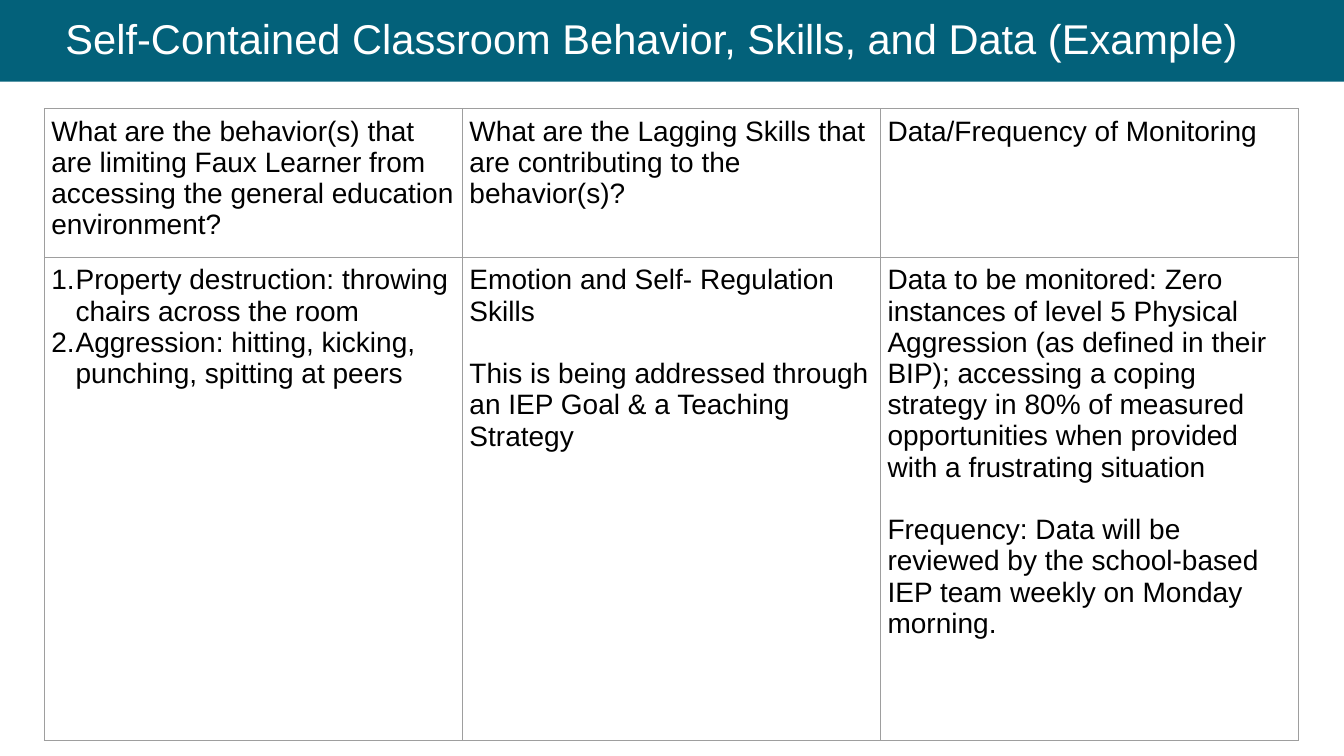
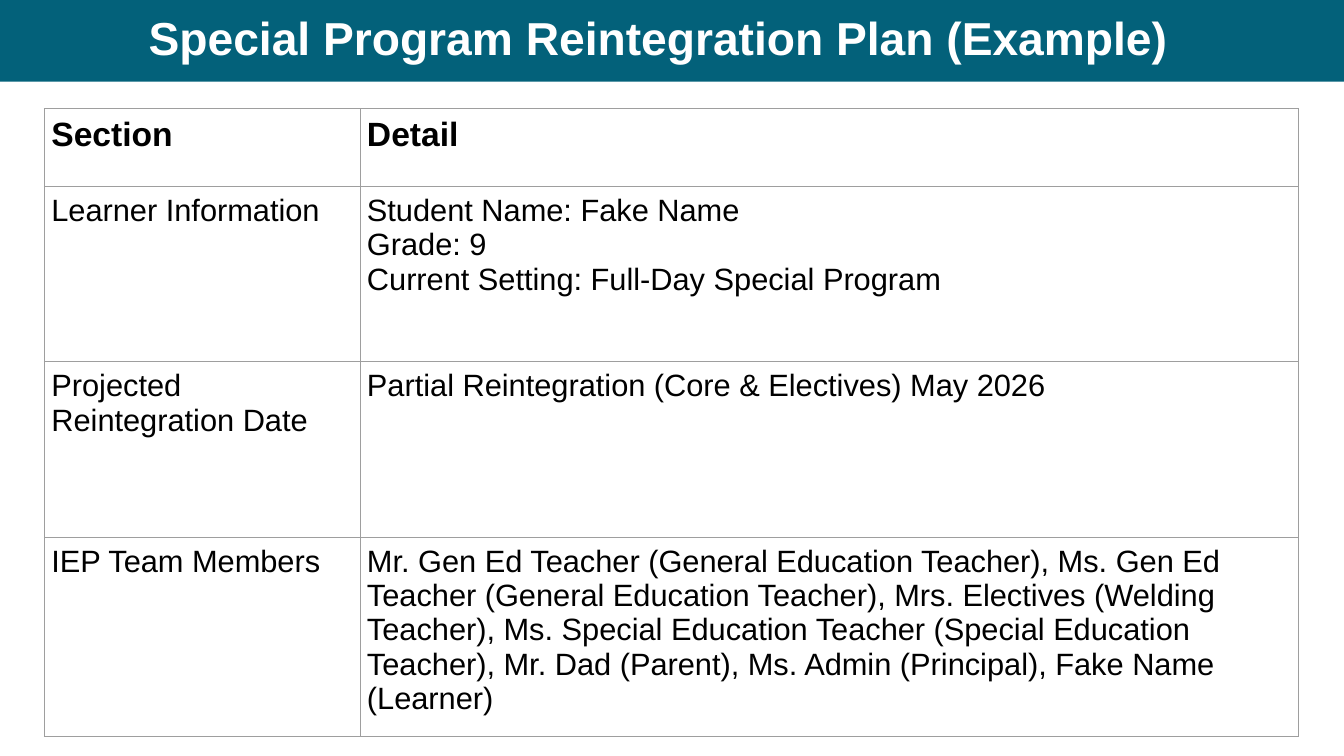
from lxml import etree
from pptx import Presentation
from pptx.dml.color import RGBColor
from pptx.enum import shapes, text
from pptx.oxml import ns
from pptx.util import Inches, Pt

FONT = "Arial"
TEAL, WHITE, BLACK, GREY = "03617A", "FFFFFF", "000000", "9E9E9E"
SLIDE_WIDTH, SLIDE_HEIGHT = 13.33, 7.5
BAND_HEIGHT = 0.81
TITLE_LEFT, TITLE_WIDTH = 0.37, 12.32
TABLE_LEFT, TABLE_TOP, TABLE_WIDTH = 0.44, 1.08, 12.44
CELL_MARGIN = 0.07
NUMBER_INDENT = 0.24

BEHAVIOR_ROWS = [
    [["What are the behavior(s) that are limiting Faux Learner from accessing "
      "the general education environment?"],
     ["What are the Lagging Skills that are contributing to the behavior(s)?"],
     ["Data/Frequency of Monitoring"]],
    [["Property destruction: throwing chairs across the room",
      "Aggression: hitting, kicking, punching, spitting at peers"],
     ["Emotion and Self- Regulation Skills",
      "This is being addressed through an IEP Goal & a Teaching Strategy"],
     ["Data to be monitored: Zero instances of level 5 Physical Aggression "
      "(as defined in their BIP); accessing a coping strategy in 80% of measured "
      "opportunities when provided with a frustrating situation",
      "Frequency: Data will be reviewed by the school-based IEP team weekly on "
      "Monday morning."]],
]

PLAN_ROWS = [
    [["Section"], ["Detail"]],
    [["Learner Information"],
     ["Student Name: Fake Name", "Grade: 9",
      "Current Setting: Full-Day Special Program"]],
    [["Projected Reintegration Date"],
     ["Partial Reintegration (Core & Electives) May 2026"]],
    [["IEP Team Members"],
     ["Mr. Gen Ed Teacher (General Education Teacher), Ms. Gen Ed Teacher "
      "(General Education Teacher), Mrs. Electives (Welding Teacher), "
      "Ms. Special Education Teacher (Special Education Teacher), "
      "Mr. Dad (Parent), Ms. Admin (Principal), Fake Name (Learner)"]],
]


def color(value):
    return RGBColor.from_string(value)


def set_font(para, size, shade, bold=False):
    font = para.font
    font.name, font.size, font.bold = FONT, Pt(size), bold
    font.color.rgb = color(shade)


def add_page(deck, title, size, bold=False):
    """Add a blank page with the teal band and its centred title."""
    page = deck.slides.add_slide(deck.slide_layouts[6])
    band = page.shapes.add_shape(shapes.MSO_SHAPE.RECTANGLE, 0, 0,
                                 Inches(SLIDE_WIDTH), Inches(BAND_HEIGHT))
    band.shadow.inherit = False
    band.fill.solid()
    band.fill.fore_color.rgb = color(TEAL)
    band.line.fill.background()

    box = page.shapes.add_textbox(Inches(TITLE_LEFT), 0,
                                  Inches(TITLE_WIDTH), Inches(BAND_HEIGHT))
    frame = box.text_frame
    frame.word_wrap = True
    frame.vertical_anchor = text.MSO_ANCHOR.MIDDLE
    para = frame.paragraphs[0]
    para.text = title
    para.alignment = text.PP_ALIGN.CENTER
    para.line_spacing = 0.9
    set_font(para, size, WHITE, bold)
    return page


def style_cell(cell):
    """Set margins, white fill and thin grey borders."""
    cell.margin_left = cell.margin_right = Inches(CELL_MARGIN)
    cell.margin_top = cell.margin_bottom = Inches(CELL_MARGIN)
    properties = cell._tc.get_or_add_tcPr()
    for side in ("a:lnL", "a:lnR", "a:lnT", "a:lnB"):
        line = etree.SubElement(properties, ns.qn(side), w=str(Pt(0.75)))
        fill = etree.SubElement(line, ns.qn("a:solidFill"))
        etree.SubElement(fill, ns.qn("a:srgbClr"), val=GREY)
    cell.fill.solid()
    cell.fill.fore_color.rgb = color(WHITE)


def number_paragraph(para):
    properties = para._p.get_or_add_pPr()
    properties.set("marL", str(Inches(NUMBER_INDENT)))
    properties.set("indent", str(-Inches(NUMBER_INDENT)))
    shade = etree.SubElement(properties, ns.qn("a:buClr"))
    etree.SubElement(shade, ns.qn("a:srgbClr"), val=BLACK)
    etree.SubElement(properties, ns.qn("a:buFont"), typeface=FONT)
    etree.SubElement(properties, ns.qn("a:buAutoNum"), type="arabicPeriod")


def fill_cell(cell, lines, size, bold=False, gap=0, numbered=False):
    """Write one paragraph per line, with a gap in points between them."""
    style_cell(cell)
    frame = cell.text_frame
    for index, line in enumerate(lines):
        para = frame.add_paragraph() if index else frame.paragraphs[0]
        para.text = line
        if index and gap:
            para.space_before = Pt(gap)
        if numbered:
            number_paragraph(para)
        set_font(para, size, BLACK, bold)


def add_grid(page, widths, heights):
    """Add a plain table at the shared position."""
    frame = page.shapes.add_table(len(heights), len(widths),
                                  Inches(TABLE_LEFT), Inches(TABLE_TOP),
                                  Inches(TABLE_WIDTH), Inches(sum(heights)))
    table = frame.table
    table.first_row = table.horz_banding = False
    for column, width in zip(table.columns, widths):
        column.width = Inches(width)
    for row, height in zip(table.rows, heights):
        row.height = Inches(height)
    return table


def build_behavior_page(deck):
    page = add_page(
        deck, "Self-Contained Classroom Behavior, Skills, and Data (Example) ", 29.7)
    table = add_grid(page, [TABLE_WIDTH / 3] * 3, [1.38, 4.79])
    for r, row in enumerate(BEHAVIOR_ROWS):
        for c, lines in enumerate(row):
            numbered = (r, c) == (1, 0)
            fill_cell(table.cell(r, c), lines, 20,
                      gap=0 if numbered else 22.4, numbered=numbered)


def build_plan_page(deck):
    page = add_page(deck, "Special Program Reintegration Plan (Example)", 33, bold=True)
    section_width = 3.13
    table = add_grid(page, [section_width, TABLE_WIDTH - section_width],
                     [0.77] + [1.74] * 3)
    for r, row in enumerate(PLAN_ROWS):
        header = r == 0
        for c, lines in enumerate(row):
            fill_cell(table.cell(r, c), lines, 24 if header else 22, bold=header)


def main():
    deck = Presentation()
    deck.slide_width, deck.slide_height = Inches(SLIDE_WIDTH), Inches(SLIDE_HEIGHT)
    build_behavior_page(deck)
    build_plan_page(deck)
    deck.save("out.pptx")


if __name__ == "__main__":
    main()
